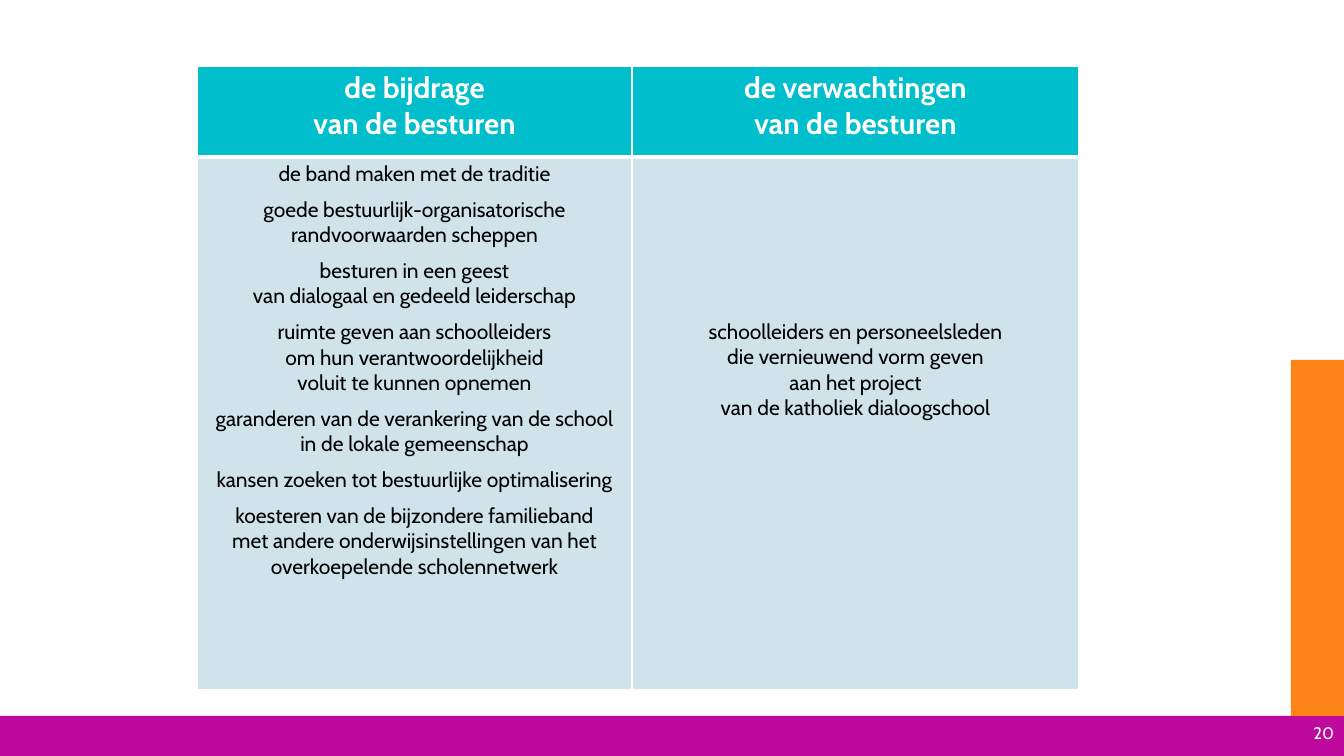
from lxml.etree import SubElement
from pptx import Presentation
from pptx.dml.color import RGBColor
from pptx.enum.shapes import MSO_SHAPE
from pptx.enum.text import MSO_ANCHOR, PP_ALIGN
from pptx.oxml.ns import qn
from pptx.util import Emu, Pt

WHITE = RGBColor(0xFF, 0xFF, 0xFF)
BLACK = RGBColor(0x00, 0x00, 0x00)
MAGENTA = RGBColor(0xBD, 0x09, 0x9C)
ORANGE = RGBColor(0xFE, 0x83, 0x19)
TURQUOISE = RGBColor(0x00, 0xBE, 0xCB)
PALE_BLUE = RGBColor(0xD0, 0xE3, 0xEA)

HEADINGS = [
    [["de bijdrage", "van de besturen"]],
    [["de verwachtingen", "van de besturen"]],
]
CONTRIBUTIONS = [
    ["de band maken met de traditie"],
    ["goede bestuurlijk-organisatorische randvoorwaarden scheppen"],
    ["besturen in een geest", "van dialogaal en gedeeld leiderschap"],
    ["ruimte geven aan schoolleiders", "om hun verantwoordelijkheid",
     "voluit te kunnen opnemen"],
    ["garanderen van de verankering van de school",
     "in de lokale gemeenschap"],
    ["kansen zoeken tot bestuurlijke optimalisering"],
    ["koesteren van de bijzondere familieband",
     "met andere onderwijsinstellingen van het",
     "overkoepelende scholennetwerk"],
]
EXPECTATIONS = [
    ["schoolleiders en personeelsleden", "die vernieuwend vorm geven",
     "aan het project", "van de katholiek dialoogschool"],
]


def px(count):
    return Emu(round(count * 914400 / 100.8))


class SlideBuilder:
    """Draws styled elements on the current slide, with lengths in px."""

    font_name = "Cabin"
    group_gap = Pt(7.3)

    def __init__(self, page):
        self.page = page

    def style(self, para, size, color, align, bold=False):
        para.alignment = align
        para.font.name = self.font_name
        para.font.size = Pt(size)
        para.font.bold = bold
        para.font.color.rgb = color

    def bar(self, left, top, width, height, color):
        shape = self.page.shapes.add_shape(
            MSO_SHAPE.RECTANGLE, px(left), px(top), px(width), px(height))
        shape.shadow.inherit = False
        shape.fill.solid()
        shape.fill.fore_color.rgb = color
        shape.line.fill.background()

    def label(self, left, top, width, height, text, size, color):
        box = self.page.shapes.add_textbox(
            px(left), px(top), px(width), px(height))
        frame = box.text_frame
        frame.word_wrap = True
        frame.vertical_anchor = MSO_ANCHOR.MIDDLE
        para = frame.paragraphs[0]
        para.text = text
        self.style(para, size, color, PP_ALIGN.RIGHT)

    def table(self, left, top, widths, heights):
        frame = self.page.shapes.add_table(
            len(heights), len(widths), px(left), px(top),
            px(sum(widths)), px(sum(heights)))
        table = frame.table
        table.first_row = table.horz_banding = False
        for column, width in zip(table.columns, widths):
            column.width = px(width)
        for row, height in zip(table.rows, heights):
            row.height = px(height)
        return table

    def border(self, cell, side, points):
        line = SubElement(cell._tc.get_or_add_tcPr(), qn(f"a:ln{side}"),
                          w=str(Pt(points)))
        fill = SubElement(line, qn("a:solidFill"))
        SubElement(fill, qn("a:srgbClr"), val=str(WHITE))

    def cell(self, cell, groups, size, color, fill, bold=False,
             margin_top=4, bottom_border=1):
        for side, points in zip("LRTB", (1, 1, 1, bottom_border)):
            self.border(cell, side, points)
        cell.fill.solid()
        cell.fill.fore_color.rgb = fill
        cell.margin_left = cell.margin_right = px(7)
        cell.margin_top, cell.margin_bottom = px(margin_top), px(4)
        cell.vertical_anchor = MSO_ANCHOR.TOP
        frame = cell.text_frame
        frame.text = "\n".join(line for group in groups for line in group)
        for para in frame.paragraphs:
            self.style(para, size, color, PP_ALIGN.CENTER, bold)
        start = 0
        for group in groups[:-1]:
            start += len(group)
            frame.paragraphs[start].space_before = self.group_gap


def main():
    deck = Presentation()
    deck.slide_width, deck.slide_height = px(1344), px(756)
    builder = SlideBuilder(deck.slides.add_slide(deck.slide_layouts[6]))

    builder.bar(0, 716, 1344, 40, MAGENTA)
    builder.bar(1291, 360, 53, 356, ORANGE)
    builder.label(1041, 709, 303, 47, "20", 12, WHITE)

    table = builder.table(197, 66, widths=[435, 447], heights=[91, 533])
    for column, heading in enumerate(HEADINGS):
        builder.cell(table.cell(0, column), heading, 21, WHITE, TURQUOISE,
                     bold=True, bottom_border=3)
    for column, (groups, margin_top) in enumerate(
            [(CONTRIBUTIONS, 4), (EXPECTATIONS, 162)]):
        builder.cell(table.cell(1, column), groups, 15, BLACK, PALE_BLUE,
                     margin_top=margin_top)

    deck.save("out.pptx")


if __name__ == "__main__":
    main()
